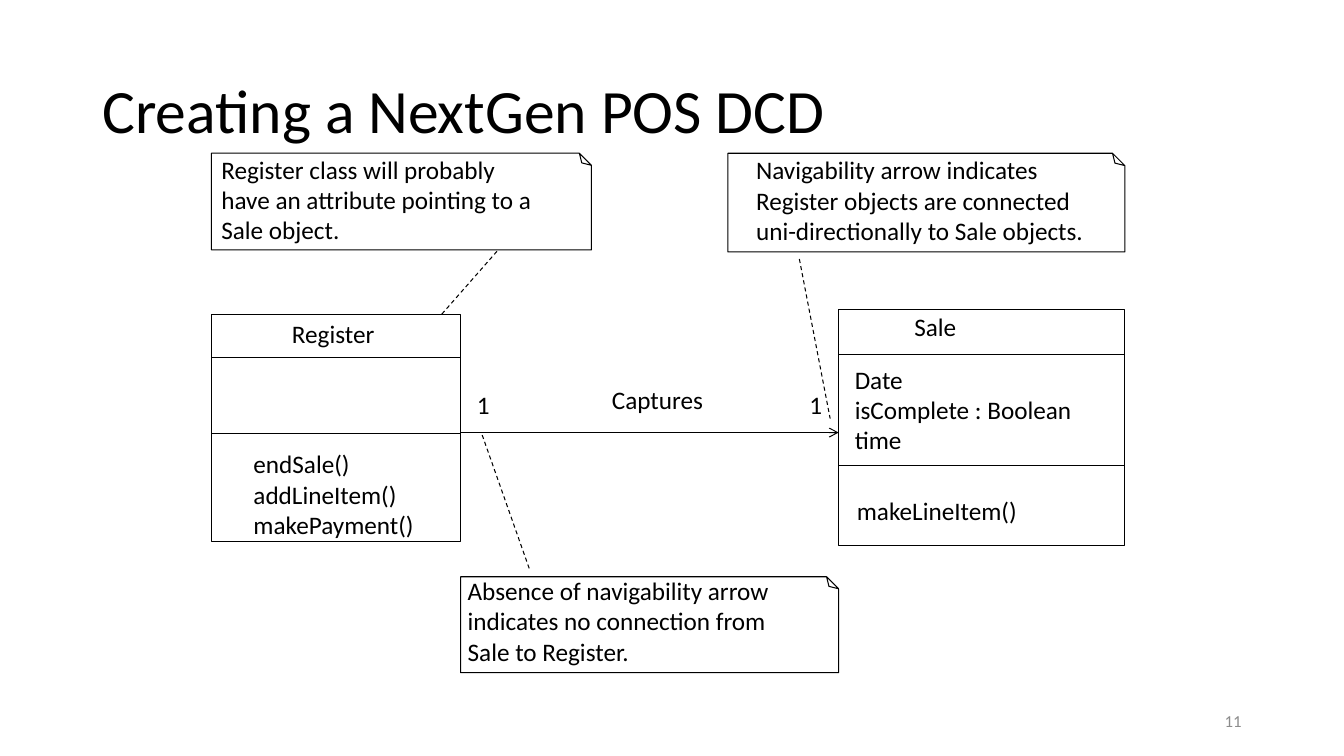
from collections import namedtuple

from lxml.etree import SubElement
from pptx import Presentation
from pptx.dml.color import RGBColor
from pptx.enum.dml import MSO_LINE
from pptx.enum.shapes import MSO_CONNECTOR, MSO_SHAPE
from pptx.enum.text import MSO_ANCHOR, MSO_AUTO_SIZE, PP_ALIGN
from pptx.oxml.ns import qn
from pptx.util import Pt

COLORS = {"ink": "000000", "number": "8C8C8C"}
FONT = "Calibri"
LINE_HEIGHT = 21.6
TEXT_PADDING = 7.4

Box = namedtuple("Box", "left top width height")
Label = namedtuple("Label", "dx dy width lines")


def color(name):
    return RGBColor.from_string(COLORS[name])


def add_span(para, text, size=18, ink="ink"):
    span = para.add_run()
    span.text = text
    span.font.name = FONT
    span.font.size = Pt(size)
    span.font.color.rgb = color(ink)


def add_text(page, box, lines, wrap=False, size=18, ink="ink", align=PP_ALIGN.LEFT):
    frame = page.shapes.add_textbox(*map(Pt, box)).text_frame
    frame.word_wrap = wrap
    for index, line in enumerate(lines):
        para = frame.add_paragraph() if index else frame.paragraphs[0]
        para.alignment = align
        add_span(para, line, size, ink)
    return frame


def add_label(page, box, label, wrap=False):
    height = len(label.lines) * LINE_HEIGHT + TEXT_PADDING
    place = Box(box.left + label.dx, box.top + label.dy, label.width, height)
    add_text(page, place, label.lines, wrap)


def add_outline(page, kind, box):
    shape = page.shapes.add_shape(kind, *map(Pt, box))
    shape.shadow.inherit = False
    shape.fill.background()
    shape.line.color.rgb = color("ink")
    shape.line.width = Pt(0.75)
    return shape


def add_line(page, start, end, dashed=False, arrow=False):
    line = page.shapes.add_connector(MSO_CONNECTOR.STRAIGHT, *map(Pt, start + end))
    line.line.color.rgb = color("ink")
    line.line.width = Pt(0.75)
    if dashed:
        line.line.dash_style = MSO_LINE.DASH
    properties = line.element.spPr
    if arrow:
        SubElement(properties.find(qn("a:ln")), qn("a:tailEnd"), type="arrow")
    SubElement(properties, qn("a:effectLst"))


def add_title(page, box, text):
    title = page.shapes.title
    title.left, title.top, title.width, title.height = map(Pt, box)
    frame = title.text_frame
    frame.auto_size = MSO_AUTO_SIZE.NONE
    frame.word_wrap = True
    frame.vertical_anchor = MSO_ANCHOR.MIDDLE
    para = frame.paragraphs[0]
    para.alignment = PP_ALIGN.LEFT
    para.line_spacing = 0.9
    add_span(para, text, 44)


def add_page_number(page, box, number):
    frame = add_text(page, box, [number], True, 12, "number", PP_ALIGN.RIGHT)
    frame.vertical_anchor = MSO_ANCHOR.MIDDLE


def add_note(page, box, label, wrap=False):
    properties = add_outline(page, MSO_SHAPE.FOLDED_CORNER, box).element.spPr
    properties.find(qn("a:xfrm")).set("flipV", "1")
    guides = properties.find(qn("a:prstGeom")).find(qn("a:avLst"))
    SubElement(guides, qn("a:gd"), name="adj", fmla="val 12500")
    add_label(page, box, label, wrap)


def add_class(page, box, dividers, labels):
    add_outline(page, MSO_SHAPE.RECTANGLE, box)
    for offset in dividers:
        height = box.top + offset
        add_line(page, (box.left, height), (box.left + box.width, height))
    for label in labels:
        add_label(page, box, label)


def add_association(page, box, name):
    end = box.left + box.width
    add_line(page, (box.left, box.top), (end, box.top), arrow=True)
    add_label(page, box, Label(4.5, -34.5, 24.5, ["1"]))
    add_label(page, box, Label(101, -38, 80.5, [name]))
    add_label(page, box, Label(box.width - 28, -34.5, 24.5, ["1"]))


def add_diagram(page, box):
    def place(left, top, width, height):
        return Box(box.left + left, box.top + top, width, height)

    register = place(0, 115, 178, 162)
    sale = place(448, 111.5, 204, 168.5)
    add_class(page, register, (31, 85), [
        Label(50.5, -0.5, 74, ["Register"]),
        Label(23, 92.5, 130.5, ["endSale()", "addLineItem()", "makePayment()"]),
    ])
    add_class(page, sale, (32, 111.5), [
        Label(47, -2, 44.5, ["Sale"]),
        Label(4.5, 35.5, 171.5, ["Date", "isComplete : Boolean", "time"]),
        Label(6, 129.5, 130.5, ["makeLineItem()"]),
    ])
    add_association(page, place(178, 199.5, 270, 0), "Captures")

    add_note(page, place(0, 0, 271.5, 69), Label(0, -3, 239, [
        "Register class will probably",
        "have an attribute pointing to a",
        "Sale object.",
    ]))
    add_note(page, place(369, 0, 283.5, 70.5), Label(13, -2.5, 251.5, [
        "Navigability arrow indicates",
        "Register objects are connected",
        "uni-directionally to Sale objects.",
    ]))
    add_note(page, place(178, 302.5, 270, 68.5), Label(-2, -4.5, 260.5, [
        "Absence of navigability arrow indicates no connection from",
        "Sale to Register.",
    ]), wrap=True)

    for x1, y1, x2, y2 in (
        (204, 70, 164.5, 115),
        (420, 75.5, 442, 189.5),
        (227, 296.5, 193, 200),
    ):
        start = (box.left + x1, box.top + y1)
        end = (box.left + x2, box.top + y2)
        add_line(page, start, end, dashed=True)


def main():
    deck = Presentation()
    deck.slide_width, deck.slide_height = Pt(960), Pt(540)
    page = deck.slides.add_slide(deck.slide_layouts[5])
    add_title(page, Box(66, 29, 828, 104.5), "Creating a NextGen POS DCD")
    add_diagram(page, Box(151, 109.5, 652.5, 371))
    add_page_number(page, Box(678, 500.5, 216, 28.5), "11")
    deck.save("out.pptx")


if __name__ == "__main__":
    main()
